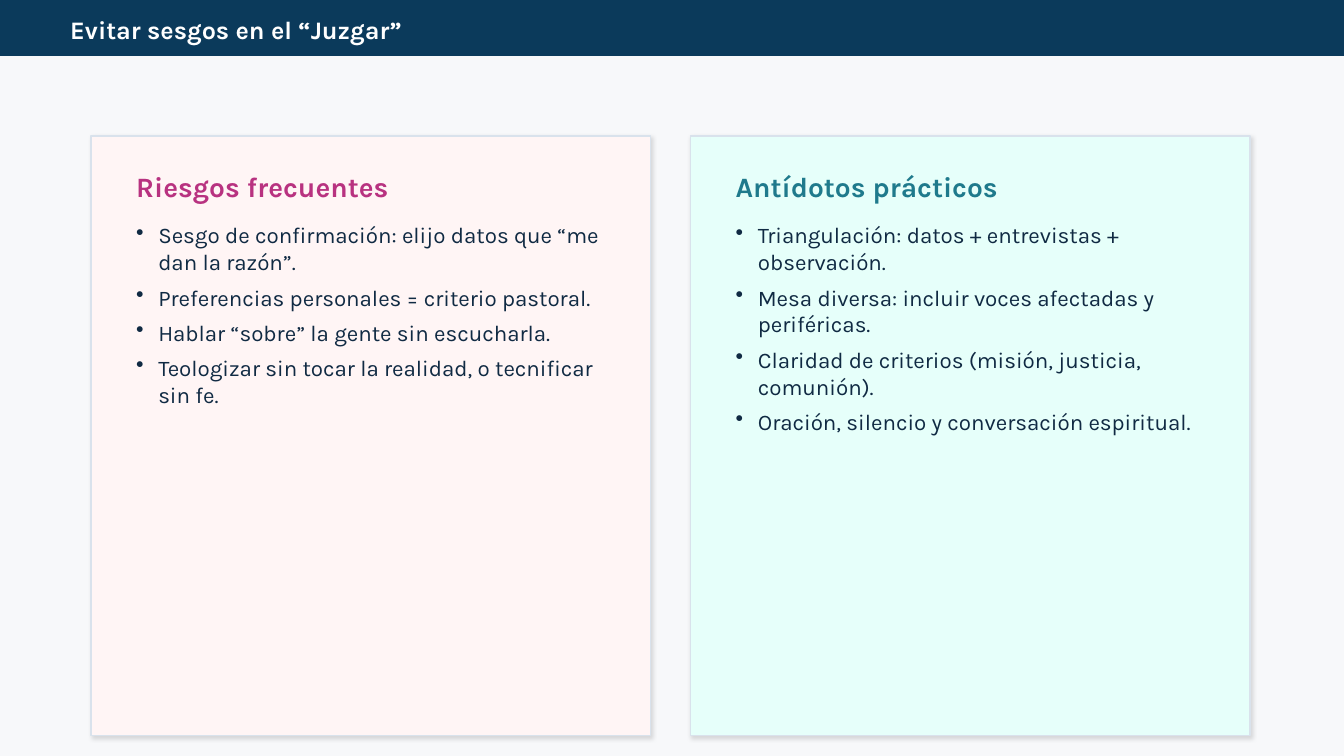
from dataclasses import dataclass

from lxml.etree import SubElement
from pptx import Presentation
from pptx.dml.color import RGBColor
from pptx.enum.shapes import MSO_SHAPE
from pptx.enum.text import MSO_ANCHOR
from pptx.oxml.ns import qn
from pptx.shapes.autoshape import Shape
from pptx.slide import Slide
from pptx.text.text import TextFrame
from pptx.util import Cm, Pt

COLORS = {
    "background": "F7F8FA",
    "header": "0B3A5B",
    "title": "FFFFFF",
    "border": "D9E2EC",
    "body": "102A43",
    "risk_fill": "FFF5F5",
    "risk_heading": "B83280",
    "remedy_fill": "E6FFFA",
    "remedy_heading": "1F7A8C",
    "shadow": "000000",
}
FORMATS = {
    "title": {"size": Pt(18), "bold": True, "name": "Karla"},
    "heading": {"size": Pt(20), "bold": True, "name": "Karla"},
    "body": {"size": Pt(16), "name": "Karla"},
}
CARD_LEFT, CARD_TOP, CARD_WIDTH, CARD_HEIGHT = 2.29, 3.43, 14.1, 15.11
CARD_PITCH = 15.11
PADDING = 0.89
TEXT_WIDTH = CARD_WIDTH - 2 * PADDING
INDENT = Cm(0.56)


@dataclass(frozen=True)
class Box:
    left: float
    top: float
    width: float
    height: float

    def lengths(self) -> tuple[Cm, Cm, Cm, Cm]:
        return Cm(self.left), Cm(self.top), Cm(self.width), Cm(self.height)


@dataclass(frozen=True)
class Card:
    heading: str
    fill: str
    heading_color: str
    points: tuple[str, ...]


CARDS = (
    Card("Riesgos frecuentes", "risk_fill", "risk_heading", (
        "Sesgo de confirmación: elijo datos que “me dan la razón”.",
        "Preferencias personales = criterio pastoral.",
        "Hablar “sobre” la gente sin escucharla.",
        "Teologizar sin tocar la realidad, o tecnificar sin fe.",
    )),
    Card("Antídotos prácticos", "remedy_fill", "remedy_heading", (
        "Triangulación: datos + entrevistas + observación.",
        "Mesa diversa: incluir voces afectadas y periféricas.",
        "Claridad de criterios (misión, justicia, comunión).",
        "Oración, silencio y conversación espiritual.",
    )),
)


def rgb(color: str) -> RGBColor:
    return RGBColor.from_string(COLORS[color])


def add_rect(s: Slide, box: Box, fill: str, line: str) -> Shape:
    sp = s.shapes.add_shape(MSO_SHAPE.RECTANGLE, *box.lengths())
    sp.shadow.inherit = False
    sp.fill.solid()
    sp.fill.fore_color.rgb = rgb(fill)
    sp.line.color.rgb = rgb(line)
    sp.line.width = Pt(1)
    return sp


def add_shadow(sp: Shape) -> None:
    effects = sp._element.spPr.find(qn("a:effectLst"))
    shadow = SubElement(effects, qn("a:outerShdw"), blurRad=str(Pt(3)),
                        dist=str(Pt(1.5)), dir=str(45 * 60000),
                        algn="bl", rotWithShape="0")
    color = SubElement(shadow, qn("a:srgbClr"), val=COLORS["shadow"])
    SubElement(color, qn("a:alpha"), val="12000")


def add_text(s: Slide, box: Box, lines: tuple[str, ...], style: str,
             color: str, anchor: MSO_ANCHOR) -> TextFrame:
    tf = s.shapes.add_textbox(*box.lengths()).text_frame
    tf.word_wrap = True
    tf.vertical_anchor = anchor
    for i, line in enumerate(lines):
        p = tf.add_paragraph() if i else tf.paragraphs[0]
        r = p.add_run()
        r.text = line
        for key, value in FORMATS[style].items():
            setattr(r.font, key, value)
        r.font.color.rgb = rgb(color)
    return tf


def add_bullets(tf: TextFrame) -> None:
    for p in tf.paragraphs:
        pPr = p._p.get_or_add_pPr()
        pPr.set("marL", str(INDENT))
        pPr.set("indent", str(-INDENT))
        SubElement(pPr, qn("a:buChar"), char="•")
        p.space_after = Pt(6)


def add_card(s: Slide, card: Card, left: float) -> None:
    sp = add_rect(s, Box(left, CARD_TOP, CARD_WIDTH, CARD_HEIGHT),
                  card.fill, "border")
    add_shadow(sp)
    text_left = left + PADDING
    add_text(s, Box(text_left, 4.19, TEXT_WIDTH, 1.02), (card.heading,),
             "heading", card.heading_color, MSO_ANCHOR.MIDDLE)
    tf = add_text(s, Box(text_left, 5.46, TEXT_WIDTH, 12.7), card.points,
                  "body", "body", MSO_ANCHOR.TOP)
    add_bullets(tf)


def main() -> None:
    prs = Presentation()
    prs.slide_width, prs.slide_height = Cm(33.87), Cm(19.05)
    s = prs.slides.add_slide(prs.slide_layouts[6])
    s.background.fill.solid()
    s.background.fill.fore_color.rgb = rgb("background")
    add_rect(s, Box(0, 0, 33.87, 1.4), "header", "header")
    add_text(s, Box(1.52, 0.3, 30.99, 0.89), ("Evitar sesgos en el “Juzgar”",),
             "title", "title", MSO_ANCHOR.MIDDLE)
    for i, card in enumerate(CARDS):
        add_card(s, card, CARD_LEFT + i * CARD_PITCH)
    prs.save("out.pptx")


if __name__ == "__main__":
    main()
